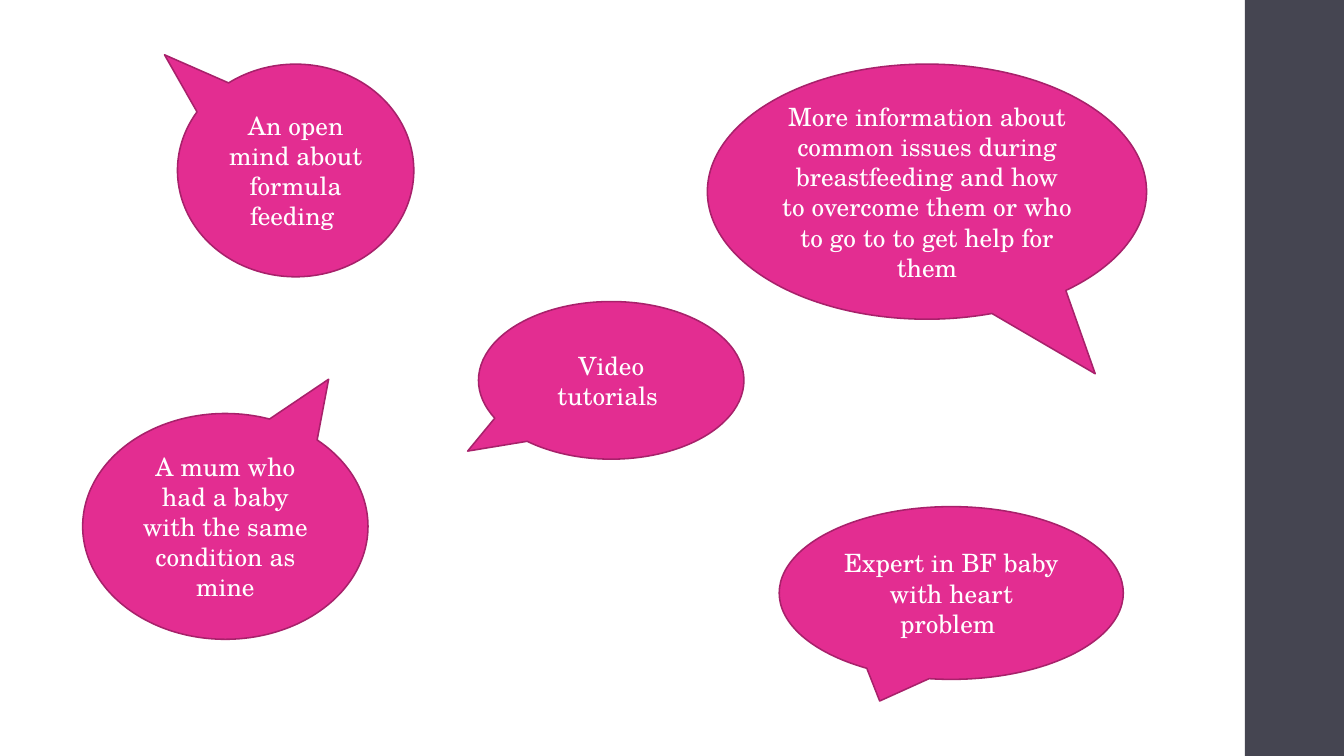
from pptx import Presentation
from pptx.dml.color import RGBColor
from pptx.enum.shapes import MSO_SHAPE
from pptx.enum.text import MSO_ANCHOR, PP_ALIGN
from pptx.util import Pt

RECTANGLE = MSO_SHAPE.RECTANGLE
BUBBLE = MSO_SHAPE.OVAL_CALLOUT
MIDDLE = MSO_ANCHOR.MIDDLE
CENTER = PP_ALIGN.CENTER
FONT = "TeX Gyre Schola"


def rgb(color):
    return RGBColor.from_string(color)


def add_filled(shape_type, left, top, width, height, color):
    sp = s.shapes.add_shape(shape_type, Pt(left), Pt(top), Pt(width), Pt(height))
    sp.shadow.inherit = False
    sp.fill.solid()
    sp.fill.fore_color.rgb = rgb(color)
    return sp


prs = Presentation()
prs.slide_width, prs.slide_height = Pt(960), Pt(540)
s = prs.slides.add_slide(prs.slide_layouts[6])

# Dark band on the right
band = add_filled(RECTANGLE, 889.2, 0, 70.8, 540, "454551")
band.line.fill.background()

# Speech bubbles: left, top, width, height, tail x and y, text
bubbles = [
    (126.8, 45.8, 168.8, 151.9, -0.555, -0.544,
     "An open mind about formula feeding "),
    (341.8, 215.4, 189.6, 112.6, -0.541, 0.449,
     "Video tutorials "),
    (556.6, 361.9, 245.8, 123.4, -0.208, 0.625,
     "Expert in BF baby with heart problem "),
    (59.1, 295.4, 203.8, 161.3, 0.362, -0.652,
     "A mum who had a baby with the same condition as mine"),
    (505.3, 45.8, 313.7, 182.2, 0.383, 0.714,
     "More information about common issues during breastfeeding and how "
     "to overcome them or who to go to to get help for them"),
]
for left, top, width, height, tail_x, tail_y, text in bubbles:
    sp = add_filled(BUBBLE, left, top, width, height, "E32D91")
    sp.adjustments[0] = tail_x
    sp.adjustments[1] = tail_y
    sp.line.color.rgb = rgb("A8216B")
    sp.line.width = Pt(1.1)

    tf = sp.text_frame
    tf.word_wrap = True
    tf.vertical_anchor = MIDDLE
    p = tf.paragraphs[0]
    p.text = text
    p.alignment = CENTER
    p.font.name = FONT
    p.font.size = Pt(18)
    p.font.color.rgb = rgb("FFFFFF")

prs.save("out.pptx")
